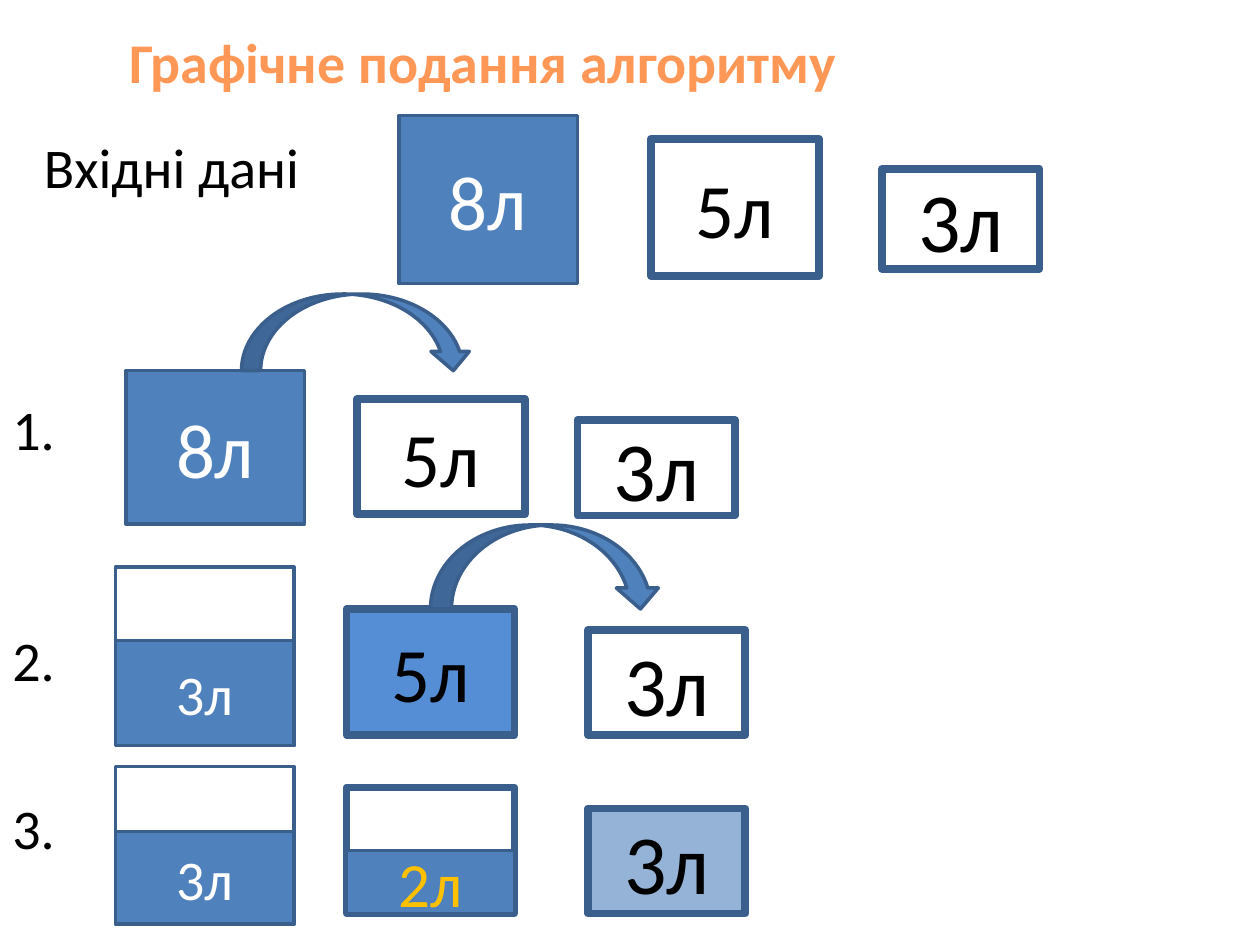
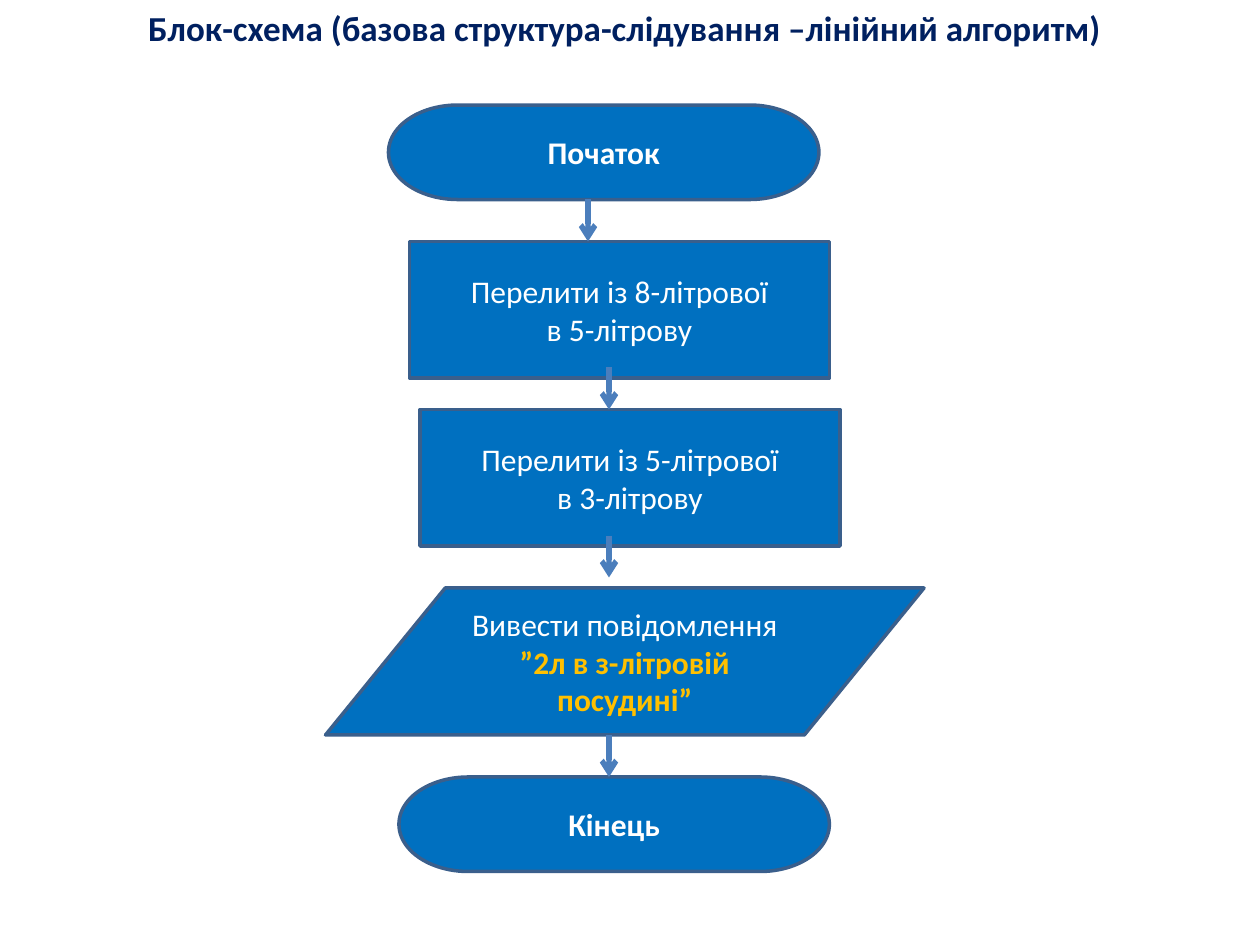
from dataclasses import dataclass
from typing import Any

from lxml.etree import SubElement
from pptx import Presentation
from pptx.dml.color import RGBColor
from pptx.enum.shapes import MSO_CONNECTOR as Connector, MSO_SHAPE as Preset
from pptx.enum.text import MSO_ANCHOR as Anchor, MSO_AUTO_SIZE as AutoSize, PP_ALIGN as Align
from pptx.oxml.ns import qn
from pptx.util import Pt

PX = 7620
SLIDE_WIDTH, SLIDE_HEIGHT = 1200, 900
BLANK_LAYOUT = 6
FONT = "Calibri"

WHITE = RGBColor(0xFF, 0xFF, 0xFF)
BLACK = RGBColor(0x00, 0x00, 0x00)
ORANGE = RGBColor(0xFF, 0x98, 0x56)
GOLD = RGBColor(0xFF, 0xC0, 0x00)
NAVY = RGBColor(0x00, 0x20, 0x60)
WATER = RGBColor(0x4F, 0x81, 0xBD)
BRIGHT_WATER = RGBColor(0x55, 0x8E, 0xD5)
PALE_WATER = RGBColor(0x95, 0xB3, 0xD7)
OUTLINE = RGBColor(0x3A, 0x5F, 0x8C)
BLOCK_BLUE = RGBColor(0x00, 0x70, 0xC0)
FLOW_LINE = RGBColor(0x4B, 0x7E, 0xBC)
THIN, THICK, FLOW_WIDTH = 2, 4.5, 3


@dataclass(frozen=True)
class Box:
    left: int
    top: int
    width: int
    height: int

    def emu(self) -> tuple[int, ...]:
        return tuple(value * PX for value in (self.left, self.top, self.width, self.height))


@dataclass(frozen=True)
class Run:
    text: str
    size: int
    color: RGBColor
    bold: bool = False


Lines = tuple[tuple[Run, ...], ...]


@dataclass(frozen=True)
class VesselKind:
    name: str
    width: int
    border: float
    size: int
    color: RGBColor


EIGHT = VesselKind("8л", 170, THIN, 44, WHITE)
FIVE = VesselKind("5л", 160, THICK, 44, BLACK)
THREE = VesselKind("3л", 150, THICK, 48, BLACK)


@dataclass(frozen=True)
class Vessel:
    kind: VesselKind
    left: int
    top: int
    height: int
    fill: RGBColor = WHITE
    water_height: int = 0
    water_label: Run | None = None


@dataclass(frozen=True)
class Stage:
    vessels: tuple[Vessel, ...]
    pour: Box | None = None


@dataclass(frozen=True)
class Block:
    preset: Preset
    box: Box
    lines: Lines


@dataclass(frozen=True)
class Label:
    box: Box
    run: Run
    align: Align = Align.LEFT


EIGHT_REST = Run("3л", 32, WHITE)
FIVE_REST = Run("2л", 36, GOLD)

STAGES = (
    Stage(
        (Vessel(EIGHT, 120, 353, 146, WATER), Vessel(FIVE, 340, 380, 110),
         Vessel(THREE, 550, 400, 91)),
        Box(230, 280, 220, 73),
    ),
    Stage(
        (Vessel(EIGHT, 380, 110, 160, WATER), Vessel(FIVE, 620, 132, 131),
         Vessel(THREE, 840, 161, 95)),
    ),
    Stage(
        (Vessel(FIVE, 330, 580, 120, BRIGHT_WATER), Vessel(THREE, 560, 600, 100),
         Vessel(EIGHT, 110, 540, 170, WHITE, 100, EIGHT_REST)),
        Box(410, 500, 220, 80),
    ),
    Stage(
        (Vessel(THREE, 560, 770, 100, PALE_WATER),
         Vessel(EIGHT, 110, 730, 150, WHITE, 88, EIGHT_REST),
         Vessel(FIVE, 330, 750, 120, WHITE, 60, FIVE_REST)),
    ),
)

ALGORITHM_LABELS = (
    Label(Box(20, 20, 880, 77), Run("Графічне подання алгоритму", 32, ORANGE, True), Align.CENTER),
    Label(Box(30, 120, 320, 77), Run("Вхідні дані", 32, BLACK)),
    *(Label(Box(0, top, 100, 77), Run(f"{number}.", 32, BLACK))
      for number, top in enumerate((370, 590, 750), start=1)),
)

FLOW_TITLE = Label(
    Box(30, 0, 1130, 53),
    Run("Блок-схема (базова структура-слідування –лінійний алгоритм)", 20, NAVY, True),
    Align.CENTER,
)


def terminator(text: str, left: int, top: int) -> Block:
    return Block(Preset.FLOWCHART_TERMINATOR, Box(left, top, 410, 90),
                 ((Run(text, 18, WHITE, True),),))


def pouring(source: int, target: int, left: int, top: int) -> Block:
    texts = (f"Перелити із {source}-літрової", f"в {target}-літрову")
    return Block(Preset.FLOWCHART_PROCESS, Box(left, top, 400, 130),
                 tuple((Run(text, 18, WHITE),) for text in texts))


BLOCKS = (
    terminator("Початок", 370, 100),
    terminator("Кінець", 380, 740),
    pouring(8, 5, 390, 230),
    pouring(5, 3, 400, 390),
    Block(Preset.FLOWCHART_DATA, Box(310, 560, 570, 140),
          ((Run("Вивести повідомлення ", 18, WHITE),
            Run("”2л в з-літровій посудині”", 18, GOLD, True)),)),
)
FLOW_ARROWS = ((560, 190), (580, 350), (580, 510), (580, 700))
FLOW_ARROW_LENGTH = 40


def apply_format(target: Any, values: dict[str, Any]) -> None:
    for name, value in values.items():
        setattr(target, name, value)


def write_lines(frame: Any, lines: Lines, align: Align) -> None:
    for index, runs in enumerate(lines):
        paragraph = frame.add_paragraph() if index else frame.paragraphs[0]
        paragraph.alignment = align
        for item in runs:
            run = paragraph.add_run()
            run.text = item.text
            apply_format(run.font, {"name": FONT, "size": Pt(item.size), "bold": item.bold})
            run.font.color.rgb = item.color


def draw_label(slide: Any, label: Label) -> None:
    frame = slide.shapes.add_textbox(*label.box.emu()).text_frame
    apply_format(frame, {"word_wrap": True, "auto_size": AutoSize.SHAPE_TO_FIT_TEXT})
    write_lines(frame, ((label.run,),), label.align)


def draw_shape(shapes: Any, preset: Preset, box: Box, fill: RGBColor,
               border: float = THIN, lines: Lines = ()) -> None:
    shape = shapes.add_shape(preset, *box.emu())
    shape.shadow.inherit = False
    shape.fill.solid()
    shape.fill.fore_color.rgb = fill
    shape.line.color.rgb = OUTLINE
    shape.line.width = Pt(border)
    apply_format(shape.text_frame, {"word_wrap": True, "vertical_anchor": Anchor.MIDDLE})
    write_lines(shape.text_frame, lines, Align.CENTER)


def draw_vessel(shapes: Any, vessel: Vessel) -> None:
    kind = vessel.kind
    outer = Box(vessel.left, vessel.top, kind.width, vessel.height)
    if vessel.water_label is None:
        lines = ((Run(kind.name, kind.size, kind.color),),)
        draw_shape(shapes, Preset.RECTANGLE, outer, vessel.fill, kind.border, lines)
        return
    draw_shape(shapes, Preset.RECTANGLE, outer, vessel.fill, kind.border)
    water_top = vessel.top + vessel.height - vessel.water_height
    water = Box(vessel.left, water_top, kind.width, vessel.water_height)
    draw_shape(shapes, Preset.RECTANGLE, water, WATER, lines=((vessel.water_label,),))


def draw_flow_arrow(shapes: Any, x: int, top: int) -> None:
    bottom = top + FLOW_ARROW_LENGTH
    arrow = shapes.add_connector(Connector.STRAIGHT, x * PX, top * PX, x * PX, bottom * PX)
    arrow.line.color.rgb = FLOW_LINE
    arrow.line.width = Pt(FLOW_WIDTH)
    properties = arrow.element.spPr
    SubElement(properties.find(qn("a:ln")), qn("a:tailEnd"), type="arrow")
    SubElement(properties, qn("a:effectLst"))


def build_algorithm_slide(slide: Any) -> None:
    for label in ALGORITHM_LABELS:
        draw_label(slide, label)
    for stage in STAGES:
        shapes = slide.shapes.add_group_shape().shapes
        for vessel in stage.vessels:
            draw_vessel(shapes, vessel)
        if stage.pour:
            draw_shape(shapes, Preset.CURVED_DOWN_ARROW, stage.pour, WATER)


def build_flowchart_slide(slide: Any) -> None:
    draw_label(slide, FLOW_TITLE)
    shapes = slide.shapes.add_group_shape().shapes
    for block in BLOCKS:
        draw_shape(shapes, block.preset, block.box, BLOCK_BLUE, lines=block.lines)
    for x, top in FLOW_ARROWS:
        draw_flow_arrow(shapes, x, top)


def main() -> None:
    presentation = Presentation()
    apply_format(presentation, {"slide_width": SLIDE_WIDTH * PX, "slide_height": SLIDE_HEIGHT * PX})
    layout = presentation.slide_layouts[BLANK_LAYOUT]
    for build in (build_algorithm_slide, build_flowchart_slide):
        build(presentation.slides.add_slide(layout))
    presentation.save("out.pptx")


if __name__ == "__main__":
    main()
